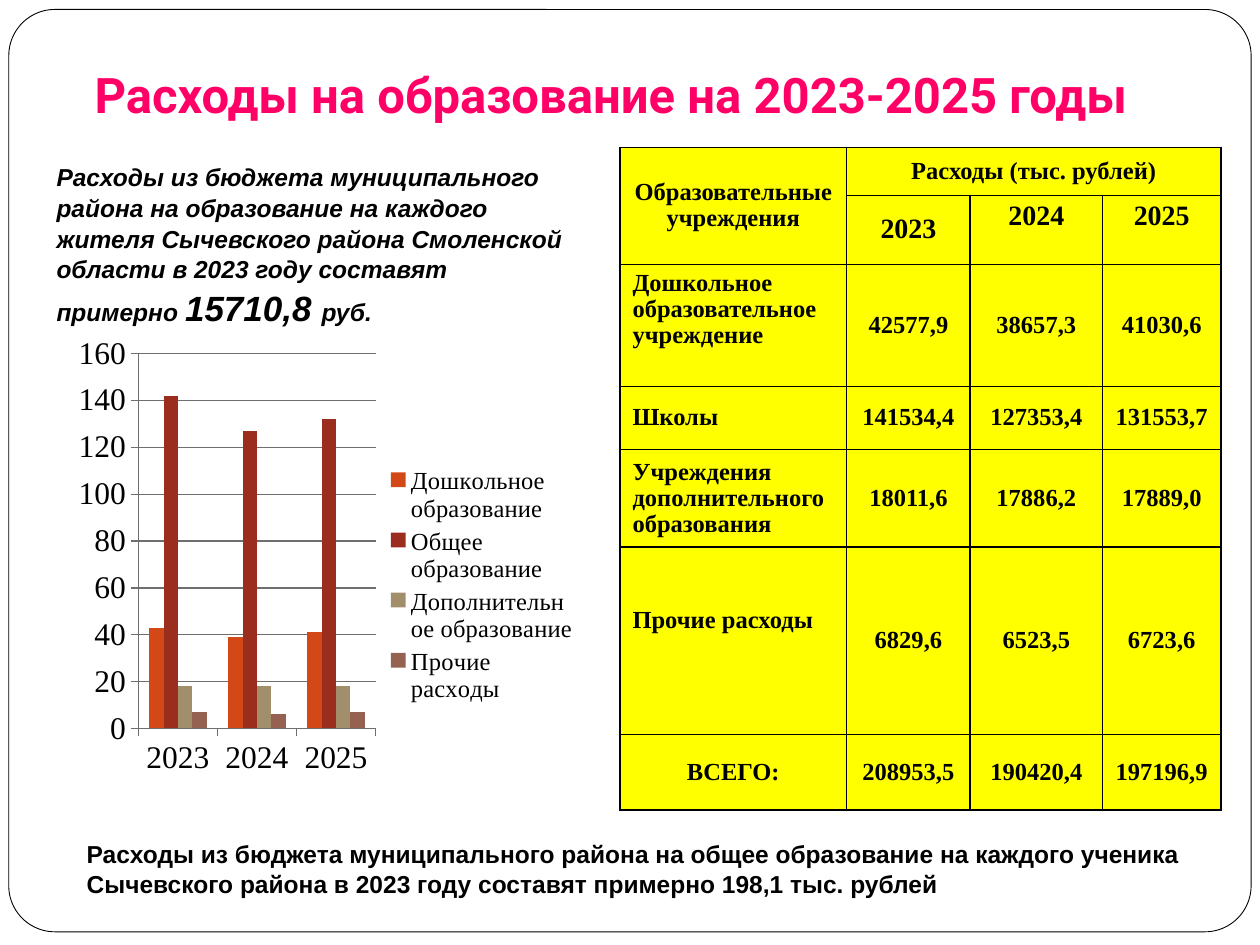
import pptx
import pptx.util
import pptx.chart.data
import pptx.dml.color
import pptx.enum.chart
import pptx.enum.shapes
import pptx.enum.text
import pptx.oxml
import pptx.oxml.ns

WIDE, HIGH = 10, 7.5
SERIF, SANS = "Times New Roman", "Arial"
ALIGN = pptx.enum.text.PP_ALIGN
ANCHOR = pptx.enum.text.MSO_ANCHOR


def tint(code):
    """Turn a hex string into a colour."""
    return pptx.dml.color.RGBColor.from_string(code)


def scale(box):
    """Turn shares of the slide into lengths."""
    sizes = (WIDE, HIGH, WIDE, HIGH)
    return [pptx.util.Inches(part * size) for part, size in zip(box, sizes)]


def style(font, size, face, code="000000", bold=True, slant=False):
    """Set the look of a font."""
    font.size = pptx.util.Pt(size)
    font.name = face
    font.bold = bold
    font.italic = slant
    font.color.rgb = tint(code)


def write(para, runs, face, **look):
    """Add runs of (text, size) to a paragraph."""
    for text, size in runs:
        run = para.add_run()
        run.text = text
        style(run.font, size, face, **look)


def add_frame(slide, box):
    """Draw the rounded border of the slide."""
    kind = pptx.enum.shapes.MSO_SHAPE.ROUNDED_RECTANGLE
    shape = slide.shapes.add_shape(kind, *scale(box))
    shape.adjustments[0] = 0.05
    shape.shadow.inherit = False
    shape.fill.solid()
    shape.fill.fore_color.rgb = tint("FFFFFF")
    shape.line.color.rgb = tint("000000")
    shape.line.width = pptx.util.Pt(0.5)


def add_text(slide, box, runs, face=SANS, anchor=ANCHOR.MIDDLE,
             align=ALIGN.LEFT, space=1.05, **look):
    """Place one paragraph of text in a box."""
    frame = slide.shapes.add_textbox(*scale(box)).text_frame
    frame.word_wrap = True
    frame.vertical_anchor = anchor
    para = frame.paragraphs[0]
    para.alignment = align
    para.line_spacing = space
    write(para, runs, face, **look)


def add_edges(cell):
    """Draw thin black borders round a cell."""
    props = cell._tc.get_or_add_tcPr()
    space = pptx.oxml.ns.nsdecls("a")
    for place, side in enumerate("LRTB"):
        props.insert(place, pptx.oxml.parse_xml(
            f'<a:ln{side} {space} w="12700"><a:solidFill>'
            f'<a:srgbClr val="000000"/></a:solidFill></a:ln{side}>'))


def add_table(slide, box, cols, rows, data):
    """Place the table of spending by kind of school."""
    table = slide.shapes.add_table(len(rows), len(cols), *scale(box)).table
    table.first_row = table.horz_banding = False
    for col, share in zip(table.columns, cols):
        col.width = pptx.util.Inches(share * box[2] * WIDE / sum(cols))
    for row, share in zip(table.rows, rows):
        row.height = pptx.util.Inches(share * box[3] * HIGH / sum(rows))
    table.cell(0, 0).merge(table.cell(1, 0))
    table.cell(0, 1).merge(table.cell(0, 3))
    for r, line in enumerate(data):
        for c, text in enumerate(line):
            cell = table.cell(r, c)
            cell.fill.solid()
            cell.fill.fore_color.rgb = tint("FFFF00")
            add_edges(cell)
            label = c == 0 and 2 <= r <= 5
            top = (r == 1 and c > 1) or (c == 0 and r in (2, 5))
            cell.vertical_anchor = ANCHOR.TOP if top else ANCHOR.MIDDLE
            if label and r == 5:
                cell.margin_top = pptx.util.Inches(0.48)
            for n, part in enumerate(text.split("\n") if text else []):
                frame = cell.text_frame
                para = frame.add_paragraph() if n else frame.paragraphs[0]
                para.alignment = ALIGN.JUSTIFY if label else ALIGN.CENTER
                para.line_spacing = 0.96
                write(para, [(part, 16 if r == 1 else 14)], SERIF)


def add_chart(slide, box, years, series):
    """Place the column chart of spending by year."""
    data = pptx.chart.data.CategoryChartData()
    data.categories = years
    for name, code, vals in series:
        data.add_series(name, vals)
    kind = pptx.enum.chart.XL_CHART_TYPE.COLUMN_CLUSTERED
    chart = slide.shapes.add_chart(kind, *scale(box), data).chart
    style(chart.font, 18, SERIF, bold=False)
    chart.has_title = False
    chart.has_legend = True
    chart.legend.position = pptx.enum.chart.XL_LEGEND_POSITION.RIGHT
    chart.legend.include_in_layout = False
    style(chart.legend.font, 14, SERIF, bold=False)
    plot = chart.plots[0]
    plot.vary_by_categories = False
    plot.gap_width, plot.overlap = 150, 0
    for item, (name, code, vals) in zip(plot.series, series):
        item.format.fill.solid()
        item.format.fill.fore_color.rgb = tint(code)
    axis = chart.value_axis
    axis.minimum_scale, axis.maximum_scale, axis.major_unit = 0, 160, 20
    axis.has_major_gridlines = True
    lines = [axis.major_gridlines.format.line]
    for each in (axis, chart.category_axis):
        each.major_tick_mark = pptx.enum.chart.XL_TICK_MARK.OUTSIDE
        lines.append(each.format.line)
    for line in lines:
        line.color.rgb = tint("6E6E6E")
        line.width = pptx.util.Pt(0.75)
    set_plot(chart, (0.18, 0.055, 0.43, 0.72))


def set_plot(chart, box):
    """Fix the inner plot area as shares of the chart."""
    area = chart._chartSpace.chart.plotArea
    for old in area.findall(pptx.oxml.ns.qn("c:layout")):
        area.remove(old)
    parts = "".join(f'<c:{key} val="{val}"/>' for key, val in zip("xywh", box))
    area.insert(0, pptx.oxml.parse_xml(
        f'<c:layout {pptx.oxml.ns.nsdecls("c")}><c:manualLayout>'
        '<c:layoutTarget val="inner"/><c:xMode val="edge"/>'
        f'<c:yMode val="edge"/>{parts}</c:manualLayout></c:layout>'))


def main():
    """Build the slide and save it."""
    deck = pptx.Presentation()
    deck.slide_width = pptx.util.Inches(WIDE)
    deck.slide_height = pptx.util.Inches(HIGH)
    slide = deck.slides.add_slide(deck.slide_layouts[6])
    years = ["2023", "2024", "2025"]
    add_frame(slide, (0.007, 0.01, 0.986, 0.976))
    add_text(slide, (0, 0.037, 0.969, 0.1),
             [("Расходы на образование на 2023-2025 годы", 28)], "Roboto",
             ANCHOR.BOTTOM, ALIGN.CENTER, 1, code="FF0066")
    add_table(slide, (0.492, 0.156, 0.477, 0.696),
              (1.8, 0.98, 1.05, 0.94),
              (0.38, 0.53, 0.97, 0.5, 0.75, 1.49, 0.6), [
        ["Образовательные учреждения", "Расходы (тыс. рублей)", "", ""],
        ["", *years],
        ["Дошкольное образовательное учреждение",
         "42577,9", "38657,3", "41030,6"],
        ["Школы", "141534,4", "127353,4", "131553,7"],
        ["Учреждения\nдополнительного\nобразования",
         "18011,6", "17886,2", "17889,0"],
        ["Прочие расходы", "6829,6", "6523,5", "6723,6"],
        ["ВСЕГО:", "208953,5", "190420,4", "197196,9"]])
    add_text(slide, (0.035, 0.164, 0.425, 0.189), [
        ("Расходы из бюджета муниципального района на образование на каждого "
         "жителя Сычевского района Смоленской области в 2023 году составят "
         "примерно ", 14), ("15710,8 ", 20), ("руб.", 14)], slant=True)
    add_text(slide, (0.059, 0.888, 0.9, 0.061), [
        ("Расходы из бюджета муниципального района на общее образование на "
         "каждого ученика Сычевского района в 2023 году составят примерно "
         "198,1 тыс. рублей", 14)])
    add_chart(slide, (0.031, 0.344, 0.438, 0.551), years, [
        ("Дошкольное образование", "D34817", (43, 39, 41)),
        ("Общее образование", "9B2D1F", (142, 127, 132)),
        ("Дополнительное образование", "A28E6A", (18, 18, 18)),
        ("Прочие расходы", "956251", (7, 6, 7))])
    deck.save("out.pptx")


if __name__ == "__main__":
    main()
